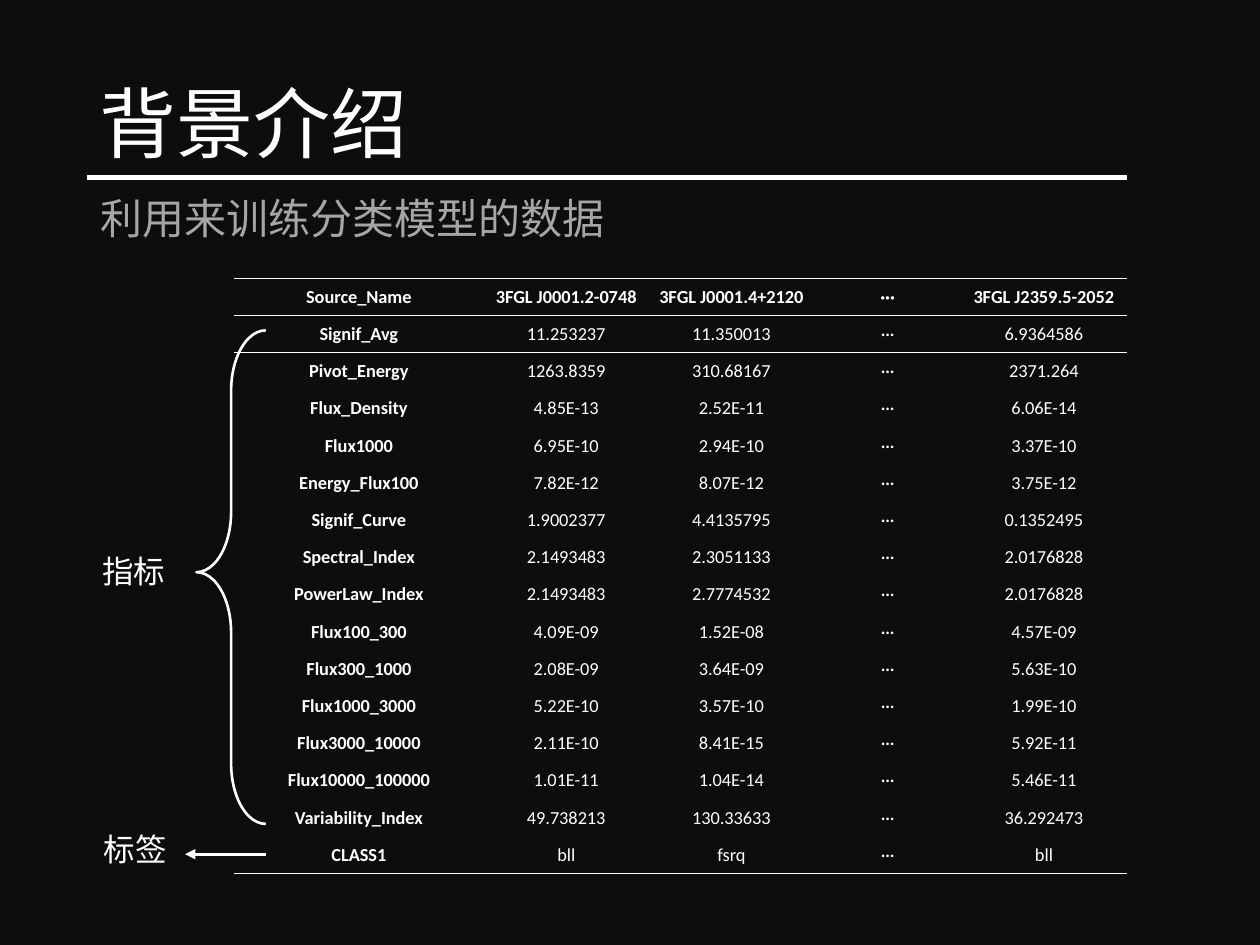
from pptx import Presentation
from pptx.dml.color import RGBColor
from pptx.enum.shapes import MSO_CONNECTOR, MSO_SHAPE
from pptx.enum.text import MSO_ANCHOR, MSO_AUTO_SIZE, PP_ALIGN
from pptx.oxml.ns import qn
from pptx.util import Cm, Pt
from lxml.etree import SubElement

COLORS = {"background": "0D0D0D", "white": "FFFFFF", "gray": "A6A6A6"}
LATIN, CHINESE = "Calibri", "Noto Sans CJK SC"
PLAIN_TABLE_STYLE = "{2D5ABB26-0587-4C30-8999-92F81FD0307C}"

COLUMN_WIDTHS = [5.03, 3.33, 3.33, 2.97, 3.33]
ROW_HEIGHT = 0.75
GAP = "···"
SOURCES = [
    ("Source_Name", "3FGL J0001.2-0748", "3FGL J0001.4+2120", "3FGL J2359.5-2052"),
    ("Signif_Avg", "11.253237", "11.350013", "6.9364586"),
    ("Pivot_Energy", "1263.8359", "310.68167", "2371.264"),
    ("Flux_Density", "4.85E-13", "2.52E-11", "6.06E-14"),
    ("Flux1000", "6.95E-10", "2.94E-10", "3.37E-10"),
    ("Energy_Flux100", "7.82E-12", "8.07E-12", "3.75E-12"),
    ("Signif_Curve", "1.9002377", "4.4135795", "0.1352495"),
    ("Spectral_Index", "2.1493483", "2.3051133", "2.0176828"),
    ("PowerLaw_Index", "2.1493483", "2.7774532", "2.0176828"),
    ("Flux100_300", "4.09E-09", "1.52E-08", "4.57E-09"),
    ("Flux300_1000", "2.08E-09", "3.64E-09", "5.63E-10"),
    ("Flux1000_3000", "5.22E-10", "3.57E-10", "1.99E-10"),
    ("Flux3000_10000", "2.11E-10", "8.41E-15", "5.92E-11"),
    ("Flux10000_100000", "1.01E-11", "1.04E-14", "5.46E-11"),
    ("Variability_Index", "49.738213", "130.33633", "36.292473"),
    ("CLASS1", "bll", "fsrq", "bll"),
]


class SlideBuilder:
    """Holds the style and the current slide, and draws each kind of element."""

    def __init__(self, page):
        self.page = page
        page.background.fill.solid()
        page.background.fill.fore_color.rgb = self.color("background")

    def color(self, name):
        return RGBColor.from_string(COLORS[name])

    def set_text(self, frame, text, size, align, color="white", font=LATIN, bold=False):
        frame.text = text
        paragraph = frame.paragraphs[0]
        paragraph.alignment = align
        span = paragraph.runs[0]
        span.font.size = Pt(size)
        span.font.name = font
        span.font.bold = bold
        span.font.color.rgb = self.color(color)
        SubElement(span.font._element, qn("a:ea"), typeface=CHINESE)
        return paragraph

    def placeholder(self, box, text, bounds, size, color):
        box.left, box.top, box.width, box.height = map(Cm, bounds)
        frame = box.text_frame
        frame.auto_size = MSO_AUTO_SIZE.NONE
        frame.vertical_anchor = MSO_ANCHOR.MIDDLE
        paragraph = self.set_text(frame, text, size, PP_ALIGN.LEFT, color)
        paragraph.line_spacing = 0.9
        paragraph.space_before = Pt(0)
        properties = paragraph._p.get_or_add_pPr()
        properties.set("marL", "0")
        properties.set("indent", "0")
        SubElement(properties, qn("a:buNone"))

    def label(self, text, bounds):
        frame = self.page.shapes.add_textbox(*map(Cm, bounds)).text_frame
        frame.word_wrap = True
        frame.auto_size = MSO_AUTO_SIZE.SHAPE_TO_FIT_TEXT
        self.set_text(frame, text, 18, PP_ALIGN.RIGHT, font=CHINESE)

    def line(self, start, end, width, arrow=False):
        line = self.page.shapes.add_connector(
            MSO_CONNECTOR.STRAIGHT, *map(Cm, start + end))
        line.line.width = Pt(width)
        line.line.color.rgb = self.color("white")
        if arrow:
            SubElement(line.line._get_or_add_ln(), qn("a:tailEnd"), type="triangle")
        SubElement(line._element.spPr, qn("a:effectLst"))

    def brace(self, bounds, curve, middle):
        brace = self.page.shapes.add_shape(MSO_SHAPE.LEFT_BRACE, *map(Cm, bounds))
        brace.shadow.inherit = False
        brace.fill.background()
        brace.line.width = Pt(1.5)
        brace.line.color.rgb = self.color("white")
        brace.adjustments[0] = curve
        brace.adjustments[1] = middle

    def border(self, cell, side):
        edge = SubElement(cell._tc.get_or_add_tcPr(), qn(f"a:{side}"), w=str(Pt(1)))
        fill = SubElement(edge, qn("a:solidFill"))
        SubElement(fill, qn("a:srgbClr"), val=COLORS["white"])

    def table(self, left, top, rows):
        table = self.page.shapes.add_table(
            len(rows), len(COLUMN_WIDTHS), Cm(left), Cm(top),
            Cm(sum(COLUMN_WIDTHS)), Cm(ROW_HEIGHT * len(rows))).table
        table.first_row = table.horz_banding = False
        table._tbl.tblPr.find(qn("a:tableStyleId")).text = PLAIN_TABLE_STYLE
        for column, width in zip(table.columns, COLUMN_WIDTHS):
            column.width = Cm(width)
        for row_index, row in enumerate(rows):
            table.rows[row_index].height = Cm(ROW_HEIGHT)
            for column_index, text in enumerate(row):
                cell = table.cell(row_index, column_index)
                cell.margin_left = cell.margin_right = Cm(0.18)
                cell.margin_top = cell.margin_bottom = 0
                cell.vertical_anchor = MSO_ANCHOR.MIDDLE
                self.set_text(cell.text_frame, text, 10.5, PP_ALIGN.CENTER,
                              bold=row_index == 0 or column_index == 0)
                if row_index in (0, 1):
                    self.border(cell, "lnT")
                if row_index in (0, len(rows) - 1):
                    self.border(cell, "lnB")
                cell.fill.background()


def main():
    deck = Presentation()
    deck.slide_width, deck.slide_height = Cm(25.4), Cm(19.05)
    page = deck.slides.add_slide(deck.slide_layouts[1])
    builder = SlideBuilder(page)
    title, subtitle = page.placeholders
    builder.placeholder(title, "背景介绍", (1.75, 1.55, 21.9, 2.03), 44, "white")
    builder.placeholder(subtitle, "利用来训练分类模型的数据",
                        (1.78, 3.73, 21.9, 1.45), 24, "gray")
    builder.line((1.75, 3.58), (22.71, 3.58), 3)
    rows = [(*source[:3], GAP, source[3]) for source in SOURCES]
    builder.table(4.72, 5.61, rows)
    builder.brace((3.96, 6.66, 1.4, 9.95), 0.87, 0.49)
    builder.line((5.36, 17.22), (3.73, 17.22), 1.5, arrow=True)
    builder.label("指标", (0.43, 11, 3.15, 1.02))
    builder.label("标签", (0.79, 16.61, 2.82, 1.02))
    deck.save("out.pptx")


if __name__ == "__main__":
    main()
